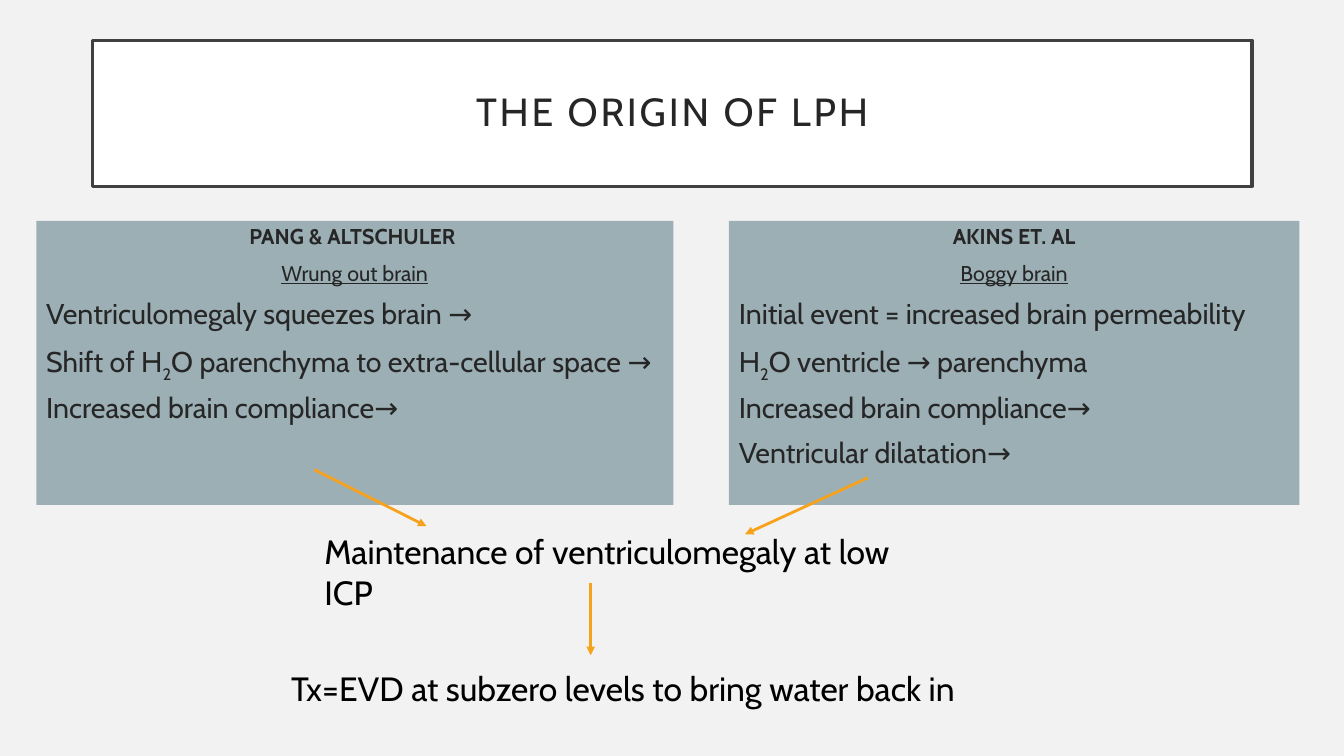
from dataclasses import dataclass
from lxml.etree import SubElement
from pptx import Presentation
from pptx.dml.color import RGBColor
from pptx.enum.shapes import MSO_CONNECTOR, MSO_SHAPE
from pptx.enum.text import MSO_ANCHOR, MSO_AUTO_SIZE, PP_ALIGN
from pptx.oxml.ns import qn
from pptx.util import Inches, Pt


@dataclass(frozen=True)
class Theme:
    font: str = "Cabin"
    page: str = "F2F2F2"
    title_fill: str = "FFFFFF"
    frame: str = "404040"
    panel: str = "9BAFB5"
    text: str = "262626"
    outcome: str = "000000"
    arrow: str = "F6A21D"
    title_size: float = 28
    outcome_size: float = 24
    step_size: float = 20.4
    head_size: float = 15.3


class Deck:
    """Hold the theme and current slide, with places given in percent of the slide."""

    def __init__(self, prs, theme):
        self.prs, self.theme = prs, theme
        self.s = prs.slides.add_slide(prs.slide_layouts[5])
        self.paint(self.s.background.fill, theme.page)

    def paint(self, fill, color):
        fill.solid()
        fill.fore_color.rgb = RGBColor.from_string(color)

    def x(self, share):
        return round(self.prs.slide_width * share / 100)

    def y(self, share):
        return round(self.prs.slide_height * share / 100)

    def box(self, left, top, width, height):
        return self.x(left), self.y(top), self.x(width), self.y(height)

    def frame(self, sp, anchor=MSO_ANCHOR.TOP, inset=None):
        tf = sp.text_frame
        fmt = {"word_wrap": True, "auto_size": MSO_AUTO_SIZE.NONE, "vertical_anchor": anchor}
        if inset:
            sides = ("left", "top", "right", "bottom")
            fmt.update({f"margin_{side}": Inches(inset) for side in sides})
        for name, value in fmt.items():
            setattr(tf, name, value)
        return tf

    def add_text(self, p, text, size, color, align=PP_ALIGN.LEFT, spacing=0.9, before=0, **style):
        fmt = {"alignment": align, "line_spacing": spacing, "space_before": Pt(before)}
        for name, value in fmt.items():
            setattr(p, name, value)
        font_fmt = {"name": self.theme.font, "size": Pt(size), "bold": False, **style}
        for i, part in enumerate(text.split("_")):
            r = p.add_run()
            r.text = part
            for name, value in font_fmt.items():
                setattr(r.font, name, value)
            r.font.color.rgb = RGBColor.from_string(color)
            if i % 2:
                r.font._element.set("baseline", "-25000")

    def title(self, text, place):
        t, sp = self.theme, self.s.shapes.title
        sp.left, sp.top, sp.width, sp.height = self.box(*place)
        self.paint(sp.fill, t.title_fill)
        self.paint(sp.line.fill, t.frame)
        sp.line.width = Pt(2.5)
        p = self.frame(sp, MSO_ANCHOR.MIDDLE, 0.2).paragraphs[0]
        self.add_text(p, text, t.title_size, t.text, PP_ALIGN.CENTER)
        p.runs[0].font._element.set("spc", "200")

    def panel(self, place, author, theory, steps):
        t = self.theme
        sp = self.s.shapes.add_shape(MSO_SHAPE.RECTANGLE, *self.box(*place))
        sp.shadow.inherit = False
        self.paint(sp.fill, t.panel)
        sp.line.fill.background()
        tf = self.frame(sp)
        self.add_text(tf.paragraphs[0], author, t.head_size, t.text, PP_ALIGN.CENTER, bold=True)
        self.add_text(tf.add_paragraph(), theory, t.head_size, t.text, PP_ALIGN.CENTER,
                      before=10, underline=True)
        for step in steps:
            self.add_text(tf.add_paragraph(), step, t.step_size, t.text, before=10)

    def outcome(self, text, place):
        sp = self.s.shapes.add_textbox(*self.box(*place))
        p = self.frame(sp).paragraphs[0]
        self.add_text(p, text, self.theme.outcome_size, self.theme.outcome, spacing=1.0)

    def arrow(self, x1, y1, x2, y2):
        c = self.s.shapes.add_connector(
            MSO_CONNECTOR.STRAIGHT, self.x(x1), self.y(y1), self.x(x2), self.y(y2))
        self.paint(c.line.fill, self.theme.arrow)
        c.line.width = Pt(2)
        SubElement(c.line._get_or_add_ln(), qn("a:tailEnd"), type="triangle")
        SubElement(c._element.spPr, qn("a:effectLst"))


def main():
    prs = Presentation()
    prs.slide_width, prs.slide_height = Inches(13.33), Inches(7.5)
    deck = Deck(prs, Theme())
    deck.title("THE ORIGIN OF LPH", (6.9, 5.33, 86.25, 19.33))
    deck.panel((2.7, 29.2, 47.4, 37.6), "PANG & ALTSCHULER ", "Wrung out brain", [
        "Ventriculomegaly squeezes brain →",
        "Shift of H_2_O parenchyma to extra-cellular space →",
        "Increased brain compliance→",
    ])
    deck.panel((54.23, 29.2, 42.45, 37.6), "AKINS ET. AL", "Boggy brain", [
        "Initial event = increased brain permeability",
        "H_2_O ventricle → parenchyma",
        "Increased brain compliance→",
        "Ventricular dilatation→",
    ])
    deck.outcome("Maintenance of ventriculomegaly at low ICP", (23.4, 69.6, 46.43, 10.8))
    for ends in ((23.4, 62.13, 31.73, 69.6), (64.58, 63.2, 55.43, 70.67),
                 (43.95, 77.07, 43.95, 86.67)):
        deck.arrow(*ends)
    deck.outcome("Tx=EVD at subzero levels to bring water back in", (20.93, 87.73, 51.38, 10.8))
    prs.save("out.pptx")


if __name__ == "__main__":
    main()
